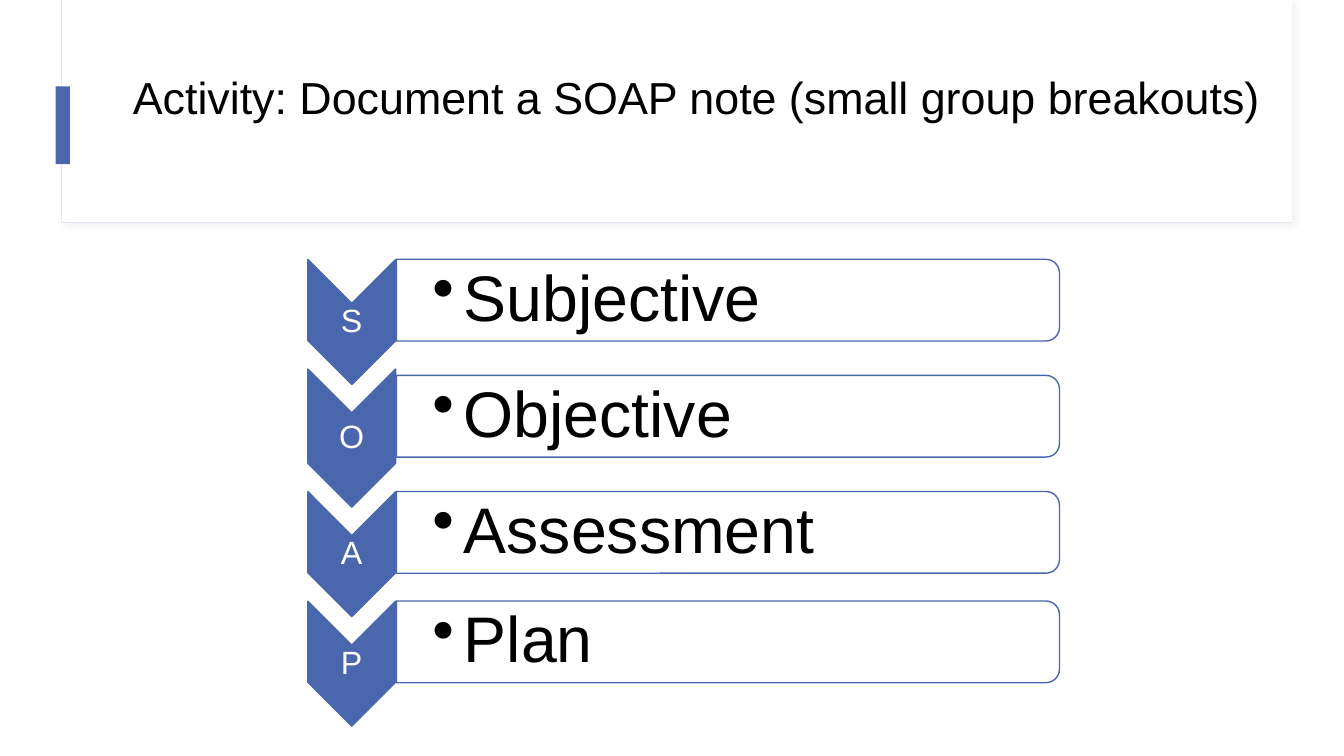
from dataclasses import dataclass

from lxml.etree import SubElement
from pptx import Presentation
from pptx.dml.color import RGBColor
from pptx.enum.shapes import MSO_SHAPE
from pptx.enum.text import MSO_ANCHOR, PP_ALIGN
from pptx.oxml.ns import qn
from pptx.util import Cm, Pt


@dataclass(frozen=True)
class Theme:
    font: str = "Arial"
    blue: str = "4A66AC"
    frame: str = "E4E5F3"
    shadow: str = "D9D9D9"
    white: str = "FFFFFF"
    black: str = "000000"
    title_size: int = 32
    letter_size: int = 23
    item_size: int = 46


THEME = Theme()
# Letter, meaning and chevron length in centimetres
STEPS = [
    ("S", "Subjective", 3.15),
    ("O", "Objective", 3.48),
    ("A", "Assessment", 3.15),
    ("P", "Plan", 3.15),
]
FIRST_TOP = 6.54
OVERLAP = 0.39
CHEVRON_LEFT, CHEVRON_WIDTH = 7.76, 2.21
BAR_LEFT, BAR_WIDTH, BAR_HEIGHT = 9.99, 16.71, 2.06
BAR_LIFT = 0.55


def add_panel(shapes, kind, left, top, width, height, fill, line=None, line_width=1):
    panel = shapes.add_shape(kind, Cm(left), Cm(top), Cm(width), Cm(height))
    panel.shadow.inherit = False
    panel.fill.solid()
    panel.fill.fore_color.rgb = RGBColor.from_string(fill)
    if line:
        panel.line.color.rgb = RGBColor.from_string(line)
        panel.line.width = Pt(line_width)
    else:
        panel.line.fill.background()
    return panel


def add_turned_panel(shapes, kind, center_x, center_y, length, breadth, fill):
    """Add a panel turned a quarter clockwise; length is its width before turning."""
    panel = add_panel(shapes, kind, center_x - length / 2, center_y - breadth / 2,
                      length, breadth, fill, THEME.blue)
    panel.rotation = 90
    return panel


def add_text(shapes, text, left, top, width, height, size, color, insets):
    """Add one middle-anchored paragraph; insets run left, top, right, bottom."""
    box = shapes.add_textbox(Cm(left), Cm(top), Cm(width), Cm(height))
    frame = box.text_frame
    frame.word_wrap = True
    frame.vertical_anchor = MSO_ANCHOR.MIDDLE
    (frame.margin_left, frame.margin_top,
     frame.margin_right, frame.margin_bottom) = map(Cm, insets)
    frame.text = text
    para = frame.paragraphs[0]
    para.line_spacing = 0.9
    font = para.runs[0].font
    font.name = THEME.font
    font.size = Pt(size)
    font.color.rgb = RGBColor.from_string(color)
    return para


def add_bullet(para, indent):
    para.level = 1
    properties = para._p.get_or_add_pPr()
    properties.set("marL", str(Cm(indent)))
    properties.set("indent", str(-Cm(indent)))
    SubElement(properties, qn("a:buChar"), char="•")


def set_alpha(color_element, percent):
    SubElement(color_element, qn("a:alpha"), val=str(percent * 1000))


def add_soft_shadow(panel):
    effects = panel._element.spPr.find(qn("a:effectLst"))
    shadow = SubElement(effects, qn("a:outerShdw"), blurRad=str(Pt(4)),
                        dist=str(Pt(3)), dir=str(45 * 60000))
    set_alpha(SubElement(shadow, qn("a:srgbClr"), val=THEME.shadow), 30)


def add_header(shapes):
    frame = add_panel(shapes, MSO_SHAPE.RECTANGLE, 1.55, 0, 31.01, 5.61,
                      THEME.white, THEME.frame, 0.75)
    add_soft_shadow(frame)
    add_panel(shapes, MSO_SHAPE.RECTANGLE, 1.57, 0, 30.99, 5.59, THEME.white)
    add_panel(shapes, MSO_SHAPE.RECTANGLE, 1.4, 2.18, 0.36, 1.96, THEME.blue)
    add_text(shapes, "Activity: Document a SOAP note (small group breakouts)",
             3.1, 1.52, 30.61, 3.25, THEME.title_size, THEME.black,
             (0.25, 0.13, 0.25, 1.4))


def add_step(shapes, letter, meaning, top, length):
    center = top + length / 2
    add_turned_panel(shapes, MSO_SHAPE.CHEVRON, CHEVRON_LEFT + CHEVRON_WIDTH / 2,
                     center, length, CHEVRON_WIDTH, THEME.blue)
    label_height = length - CHEVRON_WIDTH
    label = add_text(shapes, letter, CHEVRON_LEFT, center - label_height / 2,
                     CHEVRON_WIDTH, label_height, THEME.letter_size, THEME.white,
                     (0.05, 0.05, 0.05, 0.05))
    label.alignment = PP_ALIGN.CENTER

    bar_center = center - BAR_LIFT
    bar = add_turned_panel(shapes, MSO_SHAPE.ROUND_2_SAME_RECTANGLE,
                           BAR_LEFT + BAR_WIDTH / 2, bar_center,
                           BAR_HEIGHT, BAR_WIDTH, THEME.white)
    set_alpha(bar._element.spPr.find(qn("a:solidFill"))[0], 90)
    text_height = 1.85
    item = add_text(shapes, meaning, BAR_LEFT, bar_center - text_height / 2,
                    16.64, text_height, THEME.item_size, THEME.black,
                    (0.91, 0.08, 0.08, 0.08))
    add_bullet(item, 0.79)


def main():
    deck = Presentation()
    deck.slide_width, deck.slide_height = Cm(33.87), Cm(19.05)
    page = deck.slides.add_slide(deck.slide_layouts[6])
    add_header(page.shapes)
    diagram = page.shapes.add_group_shape()
    top = FIRST_TOP
    for letter, meaning, length in STEPS:
        add_step(diagram.shapes, letter, meaning, top, length)
        top += length - OVERLAP
    deck.save("out.pptx")


if __name__ == "__main__":
    main()
